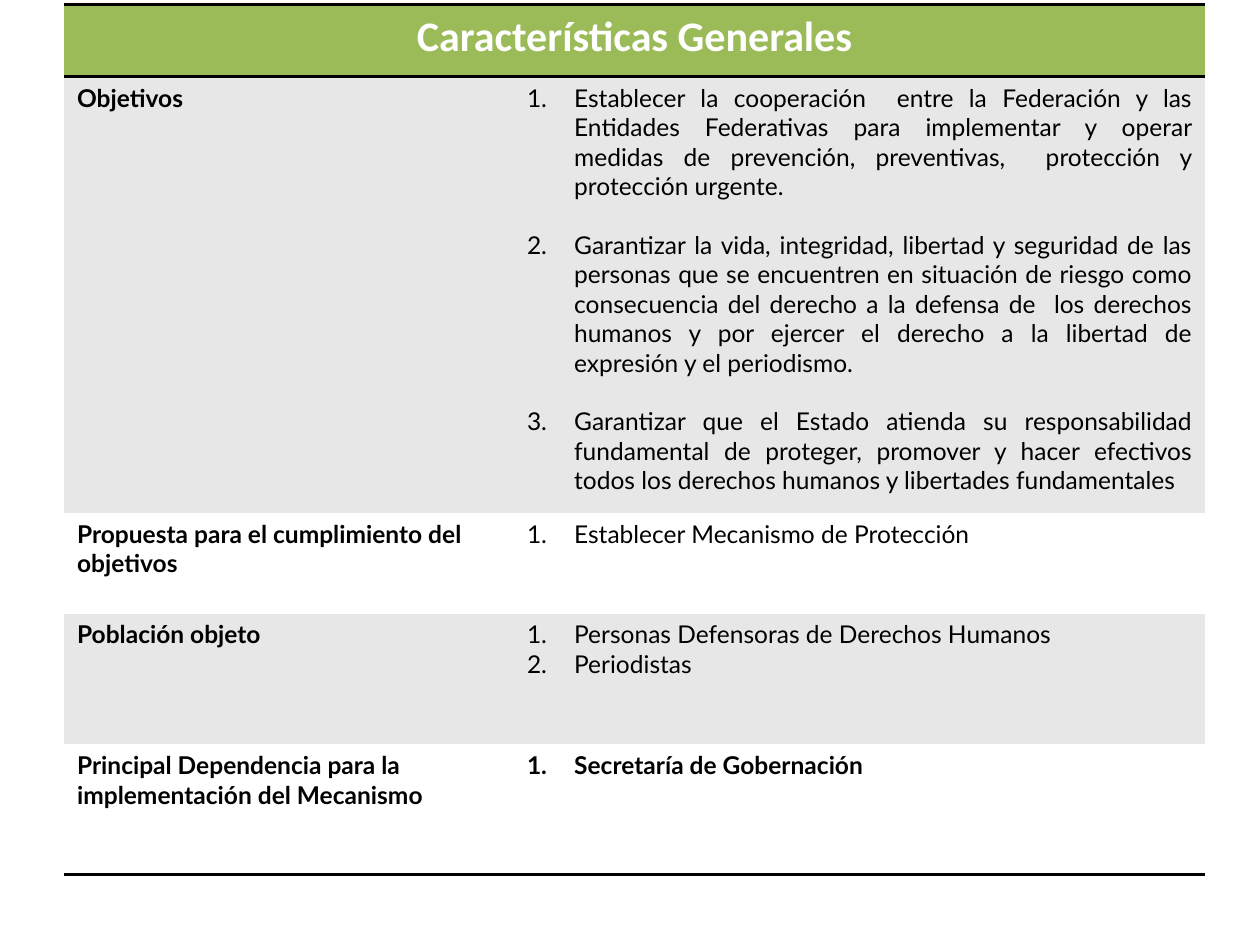
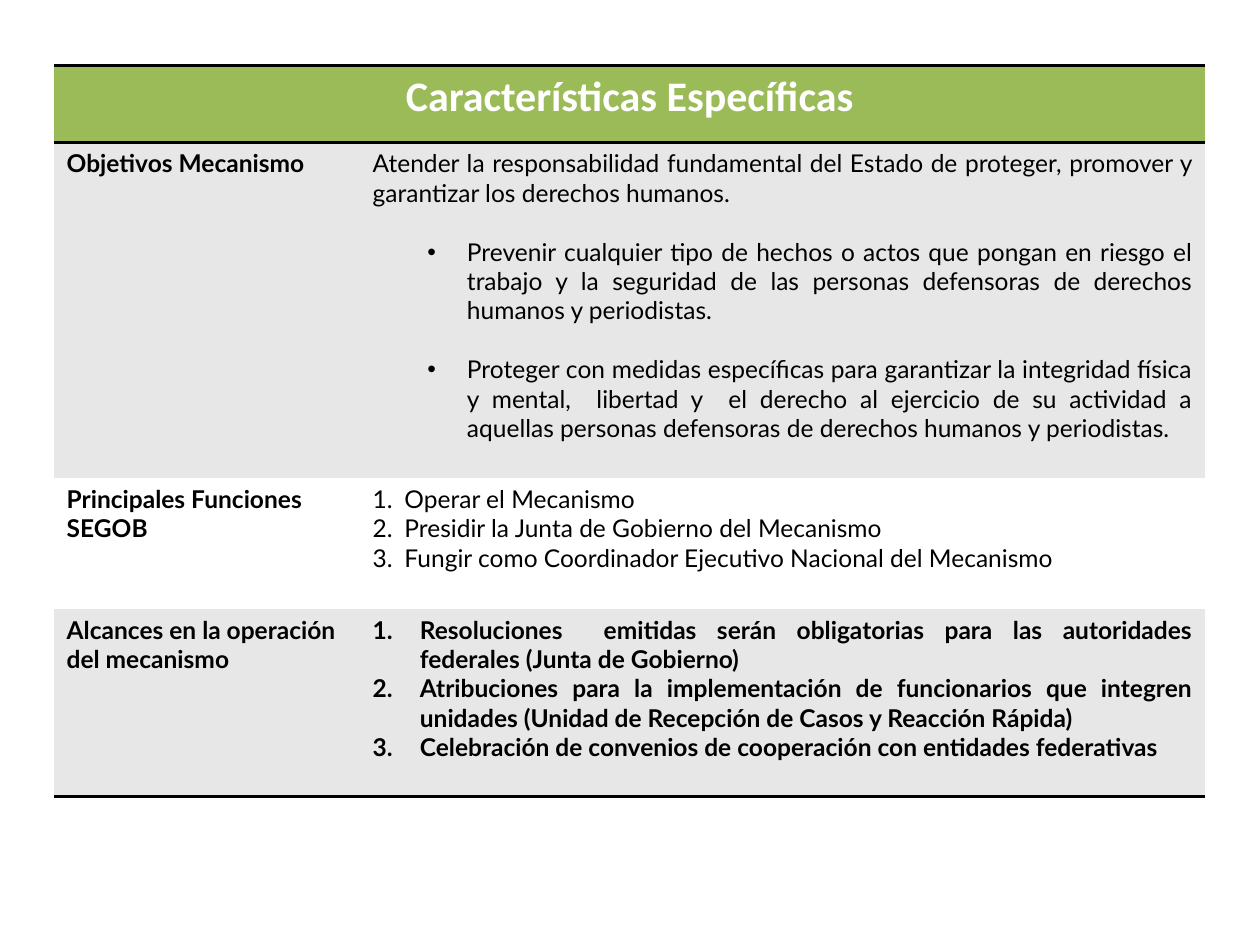
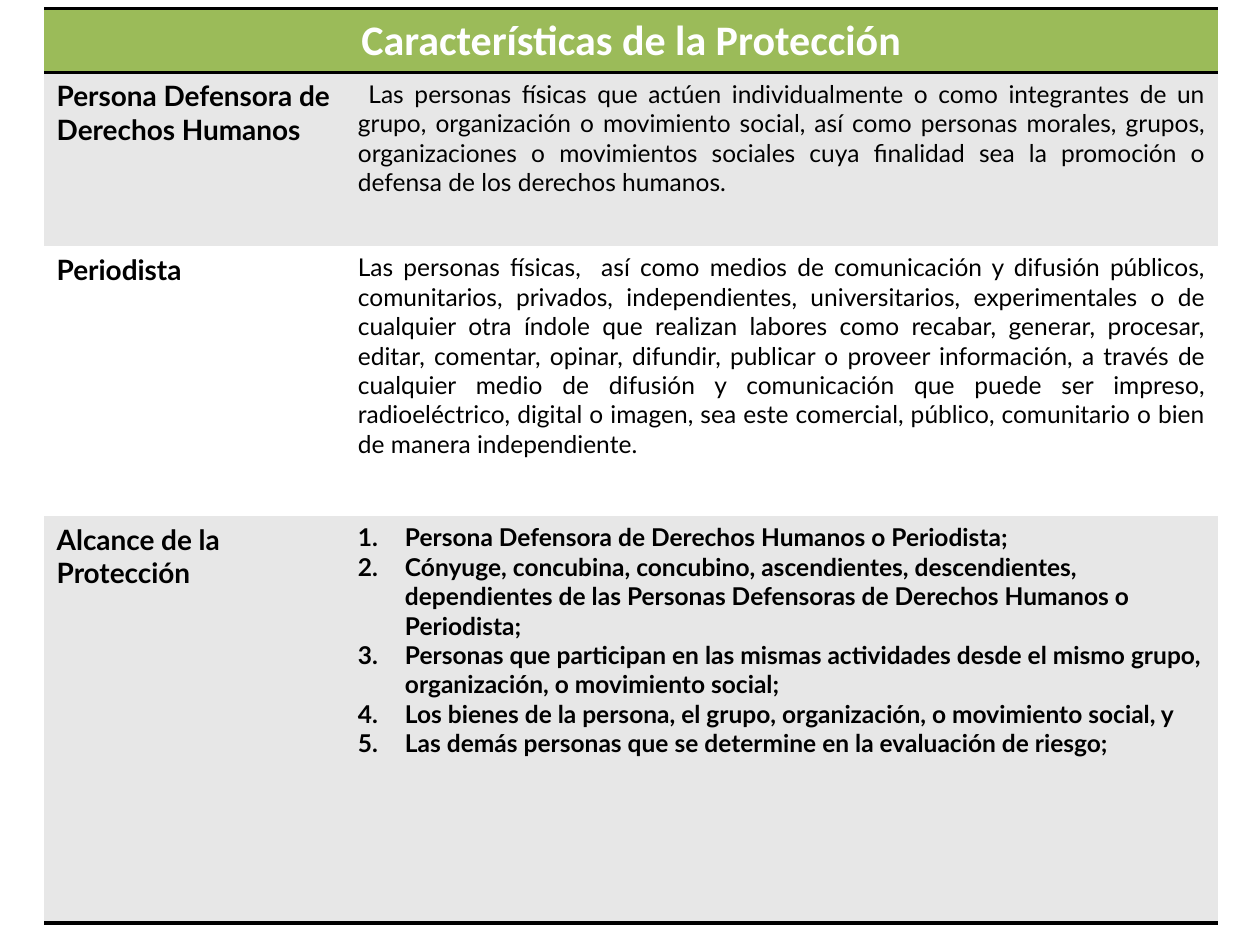
from dataclasses import dataclass

from lxml import etree
from pptx import Presentation
from pptx.dml.color import RGBColor
from pptx.enum.text import PP_ALIGN
from pptx.oxml.ns import qn
from pptx.util import Cm, Pt

LEFT, CENTER, JUSTIFY = PP_ALIGN.LEFT, PP_ALIGN.CENTER, PP_ALIGN.JUSTIFY
GREEN, GRAY, WHITE, BLACK = "9BBB59", "E7E7E7", "FFFFFF", "000000"
TITLE_FONT, BODY_FONT = "Calibri", "Lato"
TITLE_SIZE, BODY_SIZE = 24, 14
BLANK_LINE = 16.8
NO_STYLE_NO_GRID = "{2D5ABB26-0587-4C30-8999-92F81FD0307C}"


@dataclass
class Content:
    """Paragraphs of one kind; gap is the space in points before each one."""
    texts: list
    list_type: str = ""
    margin: float = 0
    hanging: float = 0
    align: int = LEFT
    bold: bool = False
    gap: float = 0
    gap_first: bool = False


def numbered(texts, hanging=0.95, **options):
    return Content(texts, "number", hanging, hanging, **options)


def rgb(color):
    return RGBColor.from_string(color)


def format_paragraph(p, size, font=BODY_FONT, color=BLACK, bold=False, align=LEFT):
    p.alignment = align
    for r in p.runs:
        r.font.size = Pt(size)
        r.font.name = font
        r.font.bold = bold
        r.font.color.rgb = rgb(color)


def set_list(p, content):
    pPr = p._p.get_or_add_pPr()
    pPr.set("marL", str(Cm(content.margin)))
    pPr.set("indent", str(-Cm(content.hanging)))
    if content.list_type == "number":
        etree.SubElement(pPr, qn("a:buFont"), typeface="+mj-lt")
        etree.SubElement(pPr, qn("a:buAutoNum"), type="arabicPeriod")
    else:
        etree.SubElement(pPr, qn("a:buFont"), typeface="Arial")
        etree.SubElement(pPr, qn("a:buChar"), char="•")


def fill_cell(cell, color):
    cell.fill.solid()
    cell.fill.fore_color.rgb = rgb(color)


def add_borders(cell, *sides):
    """Draw black rules on the given sides, in the order lnT, lnB."""
    tcPr = cell._tc.get_or_add_tcPr()
    for i, side in enumerate(sides):
        ln = etree.Element(qn(f"a:{side}"), w=str(Pt(2)))
        fill = etree.SubElement(ln, qn("a:solidFill"))
        etree.SubElement(fill, qn("a:srgbClr"), val=BLACK)
        tcPr.insert(i, ln)


def write_contents(cell, contents):
    tf = cell.text_frame
    p = tf.paragraphs[0]
    for content in contents:
        for i, text in enumerate(content.texts):
            if p is None:
                p = tf.add_paragraph()
            p.text = text
            format_paragraph(p, BODY_SIZE, bold=content.bold, align=content.align)
            if content.gap and (i or content.gap_first):
                p.space_before = Pt(content.gap)
            if content.list_type:
                set_list(p, content)
            p = None


def add_features_slide(prs, title, left, top, widths, title_height, rows,
                       label_size=BODY_SIZE):
    """Add a slide with a titled table; rows hold height, label and contents."""
    s = prs.slides.add_slide(prs.slide_layouts[6])
    heights = [title_height] + [height for height, _, _ in rows]
    frame = s.shapes.add_table(len(heights), 2, Cm(left), Cm(top),
                               Cm(sum(widths)), Cm(sum(heights)))
    table = frame.table
    table.first_row = table.horz_banding = False
    table._tbl.tblPr.find(qn("a:tableStyleId")).text = NO_STYLE_NO_GRID
    for column, width in zip(table.columns, widths):
        column.width = Cm(width)
    for row, height in zip(table.rows, heights):
        row.height = Cm(height)

    header = table.cell(0, 0)
    header.merge(table.cell(0, 1))
    header.text_frame.text = title
    format_paragraph(header.text_frame.paragraphs[0], TITLE_SIZE, TITLE_FONT,
                     WHITE, True, CENTER)
    for cell in table.rows[0].cells:
        fill_cell(cell, GREEN)
        add_borders(cell, "lnT", "lnB")

    for i, (_, label, contents) in enumerate(rows, 1):
        label_cell, content_cell = table.rows[i].cells
        label_cell.text_frame.text = label
        format_paragraph(label_cell.text_frame.paragraphs[0], label_size, bold=True)
        write_contents(content_cell, contents)
        for cell in (label_cell, content_cell):
            fill_cell(cell, GRAY if i % 2 else WHITE)
            if i == len(rows):
                add_borders(cell, "lnB")


GENERAL = [
    (8.79, "Objetivos", [numbered([
        "Establecer la cooperación  entre la Federación y las Entidades Federativas "
        "para implementar y operar medidas de prevención, preventivas,  protección y "
        "protección urgente.",
        "Garantizar la vida, integridad, libertad y seguridad de las personas que se "
        "encuentren en situación de riesgo como consecuencia del derecho a la defensa "
        "de  los derechos humanos y por ejercer el derecho a la libertad de expresión "
        "y el periodismo.",
        "Garantizar que el Estado atienda su responsabilidad fundamental de proteger, "
        "promover y hacer efectivos todos los derechos humanos y libertades "
        "fundamentales",
    ], align=JUSTIFY, gap=BLANK_LINE)]),
    (2.03, "Propuesta para el cumplimiento del objetivos",
     [numbered(["Establecer Mecanismo de Protección"])]),
    (2.64, "Población objeto",
     [numbered(["Personas Defensoras de Derechos Humanos", "Periodistas"])]),
    (2.62, "Principal Dependencia para la implementación del Mecanismo",
     [numbered(["Secretaría de Gobernación"], bold=True)]),
]

SPECIFIC = [
    (6.76, "Objetivos Mecanismo", [
        Content(["Atender la responsabilidad fundamental del Estado de proteger, "
                 "promover y garantizar los derechos humanos."], align=JUSTIFY),
        Content([
            "Prevenir cualquier tipo de hechos o actos que pongan en riesgo el trabajo "
            "y la seguridad de las personas defensoras de derechos humanos y "
            "periodistas.",
            "Proteger con medidas específicas para garantizar la integridad física y "
            "mental,  libertad y  el derecho al ejercicio de su actividad a aquellas "
            "personas defensoras de derechos humanos y periodistas.",
        ], "bullet", 1.9, 0.8, JUSTIFY, gap=BLANK_LINE, gap_first=True)]),
    (2.64, "Principales Funciones SEGOB", [numbered([
        "Operar el Mecanismo",
        "Presidir la Junta de Gobierno del Mecanismo",
        "Fungir como Coordinador Ejecutivo Nacional del Mecanismo",
    ], hanging=0.64)]),
    (3.78, "Alcances en la operación del mecanismo", [numbered([
        "Resoluciones  emitidas serán obligatorias para las autoridades federales "
        "(Junta de Gobierno)",
        "Atribuciones para la implementación de funcionarios que integren unidades "
        "(Unidad de Recepción de Casos y Reacción Rápida)",
        "Celebración de convenios de cooperación con entidades federativas",
    ], align=JUSTIFY, bold=True)]),
]

PROTECTION = [
    (3.5, "Persona Defensora de Derechos Humanos", [Content([
        " Las personas físicas que actúen individualmente o como integrantes de un "
        "grupo, organización o movimiento social, así como personas morales, grupos, "
        "organizaciones o movimientos sociales cuya finalidad sea la promoción o "
        "defensa de los derechos humanos."], align=JUSTIFY)]),
    (5.44, "Periodista", [Content([
        "Las personas físicas,  así como medios de comunicación y difusión públicos, "
        "comunitarios, privados, independientes, universitarios, experimentales o de "
        "cualquier otra índole que realizan labores como recabar, generar, procesar, "
        "editar, comentar, opinar, difundir, publicar o proveer información, a través "
        "de cualquier medio de difusión y comunicación que puede ser impreso, "
        "radioeléctrico, digital o imagen, sea este comercial, público, comunitario o "
        "bien de manera independiente."], align=JUSTIFY)]),
    (8.2, "Alcance de la Protección", [numbered([
        "Persona Defensora de Derechos Humanos o Periodista;",
        "Cónyuge, concubina, concubino, ascendientes, descendientes, dependientes de "
        "las Personas Defensoras de Derechos Humanos o Periodista;",
        "Personas que participan en las mismas actividades desde el mismo grupo, "
        "organización, o movimiento social;",
        "Los bienes de la persona, el grupo, organización, o movimiento social, y",
        "Las demás personas que se determine en la evaluación de riesgo;",
    ], bold=True)]),
]


def main():
    prs = Presentation()
    prs.slide_width, prs.slide_height = Cm(25.4), Cm(19.05)
    add_features_slide(prs, "Características Generales", 1.3, 0.1,
                       (9.07, 13.92), 1.45, GENERAL)
    add_features_slide(prs, "Características Específicas", 1.09, 1.32,
                       (6.17, 17.04), 1.55, SPECIFIC)
    add_features_slide(prs, "Características de la Protección", 0.89, 0.18,
                       (6.07, 17.6), 1.28, PROTECTION, label_size=16)
    prs.save("out.pptx")


if __name__ == "__main__":
    main()
